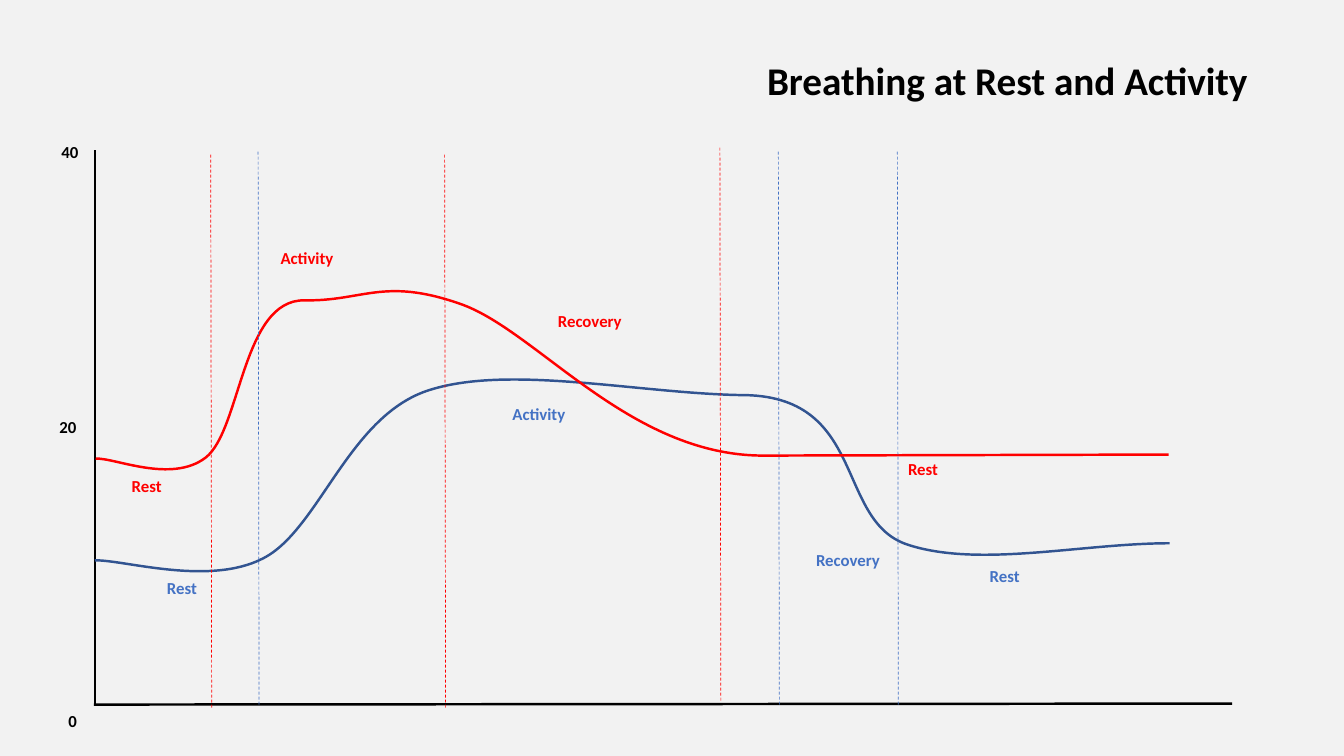
from dataclasses import dataclass

from lxml.etree import SubElement
from pptx import Presentation
from pptx.dml.color import RGBColor
from pptx.enum.dml import MSO_LINE_DASH_STYLE as Dash
from pptx.enum.shapes import MSO_CONNECTOR as Connector
from pptx.enum.text import MSO_AUTO_SIZE as AutoSize, PP_ALIGN as Align
from pptx.oxml.ns import qn
from pptx.util import Inches, Pt


@dataclass(frozen=True)
class Theme:
    """Colours, type sizes and line widths of the slide."""
    font: str = "Calibri"
    background: str = "F2F2F2"
    ink: str = "000000"
    red: str = "FF0000"
    blue: str = "4472C4"
    dark_blue: str = "325491"
    title_size: float = 28
    label_size: float = 12
    curve_width: float = 1.75
    guide_width: float = 0.5


def write_text(shape, text, *, font, size, color, align):
    """Write one bold line of text into a shape."""
    frame = shape.text_frame
    frame.word_wrap = True
    frame.auto_size = AutoSize.SHAPE_TO_FIT_TEXT
    paragraph = frame.paragraphs[0]
    paragraph.alignment = align
    run = paragraph.add_run()
    run.text = text
    run.font.name = font
    run.font.size = Pt(size)
    run.font.bold = True
    run.font.color.rgb = RGBColor.from_string(color)


class BreathingSlide:
    """Holds the theme and the slide that is being drawn."""

    def __init__(self, slide, theme):
        """Keep the slide and theme, and paint the background."""
        self.slide, self.theme = slide, theme
        fill = slide.background.fill
        fill.solid()
        fill.fore_color.rgb = RGBColor.from_string(theme.background)

    def label(self, text, left, top, width, height=0.3, color=None, size=None,
              align=Align.CENTER):
        """Add a text box."""
        box = self.slide.shapes.add_textbox(*map(Inches, (left, top, width, height)))
        write_text(box, text, font=self.theme.font, size=size or self.theme.label_size,
                   color=color or self.theme.ink, align=align)

    def line(self, start, end, color, width, dash=None):
        """Add a straight line."""
        connector = self.slide.shapes.add_connector(
            Connector.STRAIGHT, *map(Inches, (*start, *end)))
        connector.line.color.rgb = RGBColor.from_string(color)
        connector.line.width = Pt(width)
        if dash:
            connector.line.dash_style = dash
        SubElement(connector._element.spPr, qn("a:effectLst"))

    def guide(self, x, bottom, color):
        """Add a dashed, slightly leaning phase boundary."""
        self.line((x + 0.01, bottom), (x, bottom - 5.5), color,
                  self.theme.guide_width, Dash.DASH)

    def curve(self, box, start, segments, color):
        """Add an open curve of Bezier segments, or lines where one point is given."""
        left, top, width, height = map(Inches, box)
        builder = self.slide.shapes.build_freeform(left, top)
        builder.add_line_segments([(left + width, top + height)], close=False)
        shape = builder.convert_to_shape()
        outline = next(shape._element.iter(qn("a:path")))
        for command in list(outline):
            outline.remove(command)
        for index, points in enumerate(((start,), *segments)):
            tag = "a:cubicBezTo" if len(points) == 3 else "a:lnTo" if index else "a:moveTo"
            command = SubElement(outline, qn(tag))
            for x, y in points:
                SubElement(command, qn("a:pt"),
                           x=str(Inches(x) - left), y=str(Inches(y) - top))
        shape.shadow.inherit = False
        shape.fill.background()
        shape.line.color.rgb = RGBColor.from_string(color)
        shape.line.width = Pt(self.theme.curve_width)


BLUE_CURVE = (
    ((1.22, 5.55), (2.07, 5.82), (2.61, 5.54)),
    ((3.16, 5.26), (3.45, 4.15), (4.23, 3.88)),
    ((5.02, 3.61), (6.31, 3.9), (7.34, 3.92)),
    ((8.6, 3.91), (8.28, 5.15), (8.99, 5.4)),
    ((9.7, 5.64), (10.73, 5.39), (11.6, 5.39)),
)
RED_CURVE = (
    ((1.14, 4.54), (1.7, 4.8), (2.04, 4.54)),
    ((2.39, 4.27), (2.4, 2.97), (3.02, 2.98)),
    ((3.6, 2.99), (3.8, 2.75), (4.55, 3.01)),
    ((5.31, 3.26), (6.23, 4.52), (7.57, 4.52)),
    ((11.59, 4.51),),
)


def main():
    """Build the slide and save it."""
    theme = Theme()
    presentation = Presentation()
    presentation.slide_width, presentation.slide_height = Inches(13.33), Inches(7.5)
    slide = presentation.slides.add_slide(presentation.slide_layouts[6])
    graph = BreathingSlide(slide, theme)

    for start, end in (((0.94, 1.49), (0.94, 6.99)), ((0.93, 6.99), (12.22, 6.98))):
        graph.line(start, end, theme.ink, theme.curve_width)
    for value, left, top, height in (
            ("20", 0.49, 4.09, 0.3), ("40", 0.51, 1.36, 0.3), ("0", 0.58, 7, 0.51)):
        graph.label(value, left, top, 0.44, height, align=Align.LEFT)

    graph.curve((0.94, 3.76, 10.66, 1.9), (0.94, 5.56), BLUE_CURVE, theme.dark_blue)
    graph.curve((0.95, 2.89, 10.64, 1.77), (0.95, 4.55), RED_CURVE, theme.red)

    for x in (2.56, 7.72, 8.9):
        graph.guide(x, 6.99, theme.blue)
    for x, bottom in ((2.09, 7.02), (4.41, 7.02), (7.14, 6.95)):
        graph.guide(x, bottom, theme.red)

    phases = (
        ("Rest", 1.04, 4.67, 0.83, theme.red),
        ("Activity", 2.63, 2.41, 0.83, theme.red),
        ("Recovery", 5.34, 3.03, 1.02, theme.red),
        ("Rest", 1.39, 5.68, 0.83, theme.blue),
        ("Activity", 4.93, 3.96, 0.83, theme.blue),
        ("Recovery", 7.92, 5.4, 0.98, theme.blue),
        ("Rest", 9.55, 5.56, 0.83, theme.blue),
        ("Rest", 8.74, 4.5, 0.83, theme.red),
    )
    for text, left, top, width, color in phases:
        graph.label(text, left, top, width, color=color)
    graph.label("Breathing at Rest and Activity", 7.15, 0.51, 5.68, 0.57,
                size=theme.title_size)
    presentation.save("out.pptx")


if __name__ == "__main__":
    main()
